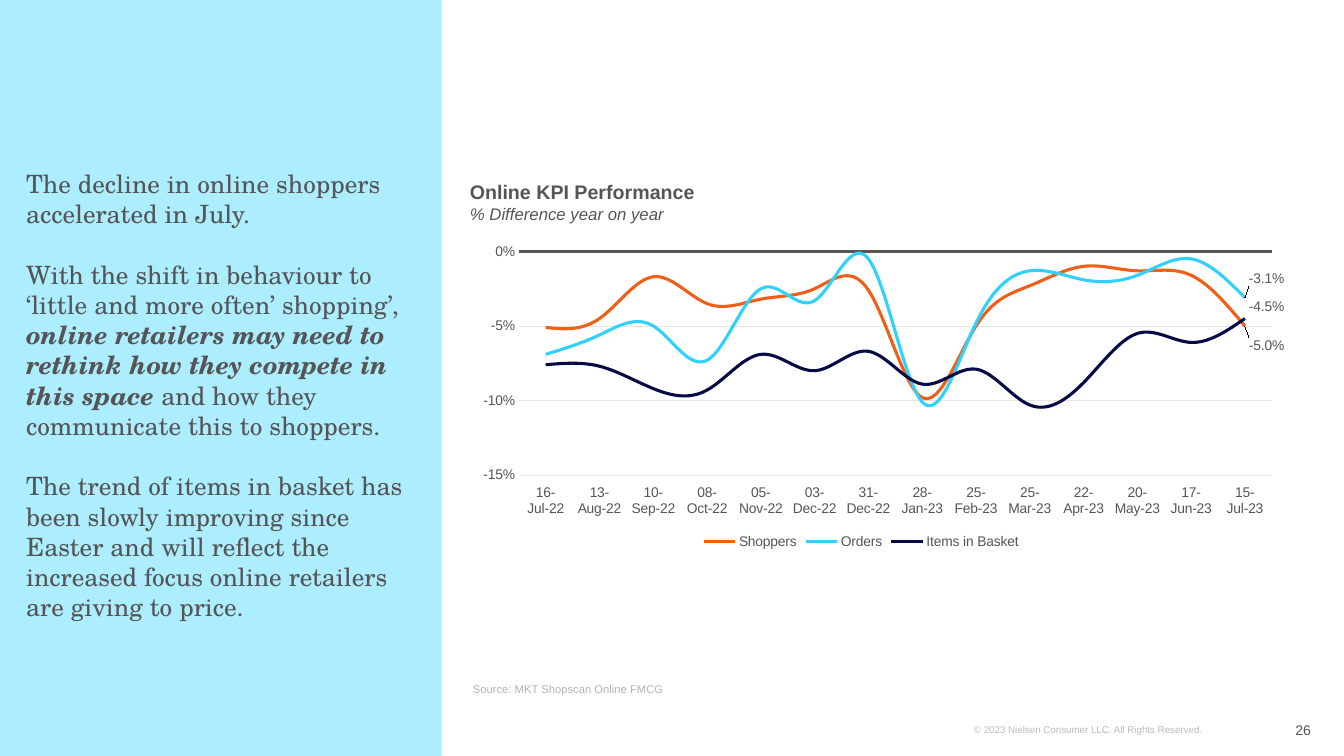
from lxml import etree
from pptx import Presentation
from pptx.chart.data import CategoryChartData
from pptx.dml.color import RGBColor
from pptx.enum import chart as ch, shapes, text
from pptx.oxml import parse_xml
from pptx.util import Inches, Pt

SANS, SERIF = "Arial", "TeX Gyre Schola"
GREY = "555555"
C = "http://schemas.openxmlformats.org/drawingml/2006/chart"
C15 = "http://schemas.microsoft.com/office/drawing/2012/chart"

DATES = ["16-Jul-22", "13-Aug-22", "10-Sep-22", "08-Oct-22", "05-Nov-22",
         "03-Dec-22", "31-Dec-22", "28-Jan-23", "25-Feb-23", "25-Mar-23",
         "22-Apr-23", "20-May-23", "17-Jun-23", "15-Jul-23"]
# name, line colour, vertical shift of the last label, values
KPIS = [
    ("Shoppers", "EF5F17", 0.05,
     [-0.051, -0.045, -0.017, -0.035, -0.032, -0.025, -0.026,
      -0.098, -0.05, -0.023, -0.01, -0.013, -0.016, -0.05]),
    ("Orders", "30D1FF", -0.05,
     [-0.069, -0.056, -0.05, -0.073, -0.025, -0.033, -0.005,
      -0.101, -0.048, -0.013, -0.019, -0.016, -0.005, -0.031]),
    ("Items in Basket", "060A45", -0.03,
     [-0.076, -0.077, -0.092, -0.093, -0.069, -0.08, -0.067,
      -0.089, -0.079, -0.103, -0.088, -0.055, -0.061, -0.045]),
]
MESSAGE = [
    [("The decline in online shoppers accelerated in July.", "")],
    [("With the shift in behaviour to ‘little and more often’ shopping’, ", ""),
     ("online retailers may need to rethink how they compete in this space ", "bi"),
     ("and how they communicate this to shoppers.", "")],
    [("The trend of items in basket has been slowly improving since Easter and "
      "will reflect the increased focus online retailers are giving to price.", "")],
]


def rgb(value):
    return RGBColor.from_string(value)


def style_font(font, size, color=GREY, name=SANS):
    font.size, font.name = Pt(size), name
    font.color.rgb = rgb(color)


def add_text(slide, box, paragraphs, size, color=GREY, font=SANS, gap=0,
             anchor=text.MSO_ANCHOR.TOP, align=text.PP_ALIGN.LEFT):
    """Each paragraph is a list of (words, style[, size]) runs."""
    frame = slide.shapes.add_textbox(*map(Inches, box)).text_frame
    frame.word_wrap = True
    frame.vertical_anchor = anchor
    frame.margin_left = frame.margin_right = 0
    for i, runs in enumerate(paragraphs):
        para = frame.add_paragraph() if i else frame.paragraphs[0]
        para.alignment = align
        if i and gap:
            para.space_before = Pt(gap)
        for words, style, *own_size in runs:
            run = para.add_run()
            run.text = words
            style_font(run.font, own_size[0] if own_size else size, color, font)
            run.font.bold, run.font.italic = "b" in style, "i" in style


def manual_layout(**settings):
    items = "".join(f'<c:{key} val="{value}"/>' for key, value in settings.items())
    return parse_xml(f'<c:layout xmlns:c="{C}"><c:manualLayout>{items}'
                     "</c:manualLayout></c:layout>")


def message_panel(slide, left, top, width, height):
    panel = slide.shapes.add_shape(shapes.MSO_SHAPE.RECTANGLE,
                                   *map(Inches, (left, top, width, height)))
    panel.shadow.inherit = False
    panel.fill.solid()
    panel.fill.fore_color.rgb = rgb("ACEDFF")
    panel.line.fill.background()
    add_text(slide, (left + 0.26, top + 1.62, width - 0.55, 4.62), MESSAGE,
             18, font=SERIF, gap=21.6)


def label_last_point(series, shift):
    """Show only the last value, moved off its point with a leader line."""
    series.data_labels.show_value = False
    label = series.points[len(DATES) - 1].data_label
    style_font(label.font, 10)
    label.position = ch.XL_LABEL_POSITION.RIGHT
    labels = series._element.find(f"{{{C}}}dLbls")
    labels.find(f"{{{C}}}dLbl/{{{C}}}idx").addnext(manual_layout(x=0, y=shift))
    extensions = etree.SubElement(labels, f"{{{C}}}extLst")
    extension = etree.SubElement(extensions, f"{{{C}}}ext", nsmap={"c15": C15},
                                 uri="{CE6537A1-D6FC-4f65-9D91-7224C49458BB}")
    etree.SubElement(extension, f"{{{C15}}}showLeaderLines", val="1")


def kpi_chart(slide, left, top, width, height):
    data = CategoryChartData(number_format="0.0%")
    data.categories = DATES
    for name, _, _, values in KPIS:
        data.add_series(name, values)
    chart = slide.shapes.add_chart(ch.XL_CHART_TYPE.LINE,
                                   *map(Inches, (left, top, width, height)), data).chart
    style_font(chart.font, 10)
    chart.has_title = False

    # Lines and end labels
    chart.plots[0].vary_by_categories = False
    for series, (_, color, shift, _) in zip(chart.plots[0].series, KPIS):
        series.smooth = True
        series.marker.style = ch.XL_MARKER_STYLE.NONE
        series.format.line.width = Pt(2.25)
        series.format.line.color.rgb = rgb(color)
        label_last_point(series, shift)

    # Axes
    dates, percent = chart.category_axis, chart.value_axis
    for axis in (dates, percent):
        axis.major_tick_mark = axis.minor_tick_mark = ch.XL_TICK_MARK.NONE
        style_font(axis.tick_labels.font, 10)
    dates.tick_label_position = ch.XL_TICK_LABEL_POSITION.LOW
    dates.format.line.color.rgb = rgb(GREY)
    dates.format.line.width = Pt(2)
    rotation = dates._element.find(f"{{{C}}}txPr")[0]
    rotation.set("rot", "-60000000")
    rotation.set("vert", "horz")
    percent.minimum_scale, percent.maximum_scale, percent.major_unit = -0.15, 0, 0.05
    percent.tick_labels.number_format = "0%"
    percent.tick_labels.number_format_is_linked = False
    percent.format.line.fill.background()
    percent.major_gridlines.format.line.color.rgb = rgb("E6E6E6")
    percent.major_gridlines.format.line.width = Pt(0.75)

    # Plot and legend places
    plot_area = chart._chartSpace.chart.plotArea
    for layout in plot_area.findall(f"{{{C}}}layout"):
        plot_area.remove(layout)
    plot_area.insert(0, manual_layout(layoutTarget="inner", xMode="edge", yMode="edge",
                                      x=0.084, y=0.22, w=0.915, h=0.578))
    chart.has_legend = True
    legend = chart.legend
    legend.position = ch.XL_LEGEND_POSITION.BOTTOM
    legend.include_in_layout = False
    style_font(legend.font, 10)
    legend._element.find(f"{{{C}}}legendPos").addnext(
        manual_layout(xMode="edge", yMode="edge", x=0.51, y=0.73, w=0.41, h=0.07))


def chart_region(slide, left, top, width):
    kpi_chart(slide, left, top, width, 3.84)
    add_text(slide, (left + 0.2, top + 0.09, width, 0.54),
             [[("Online KPI Performance", "b")], [("% Difference year on year", "i", 12)]], 14)


def footer(slide, left, top, width):
    add_text(slide, (left, top, width, 0.4), [[("Source: MKT Shopscan Online FMCG", "")]],
             8, "B3B3B3", anchor=text.MSO_ANCHOR.BOTTOM)
    add_text(slide, (left + 4.97, top + 0.58, 2.84, 0.22),
             [[("© 2023 Nielsen Consumer LLC. All Rights Reserved.", "")]], 7, "BBBBBB")
    add_text(slide, (left + width - 0.99, top + 0.49, 0.99, 0.4), [[("26", "")]], 10,
             anchor=text.MSO_ANCHOR.MIDDLE, align=text.PP_ALIGN.RIGHT)


def main():
    deck = Presentation()
    deck.slide_width, deck.slide_height = Inches(13.33), Inches(7.5)
    slide = deck.slides.add_slide(deck.slide_layouts[6])
    message_panel(slide, 0, 0, 4.38, 7.5)
    chart_region(slide, 4.46, 1.65, 8.28)
    footer(slide, 4.69, 6.55, 8.31)
    deck.save("out.pptx")


if __name__ == "__main__":
    main()
